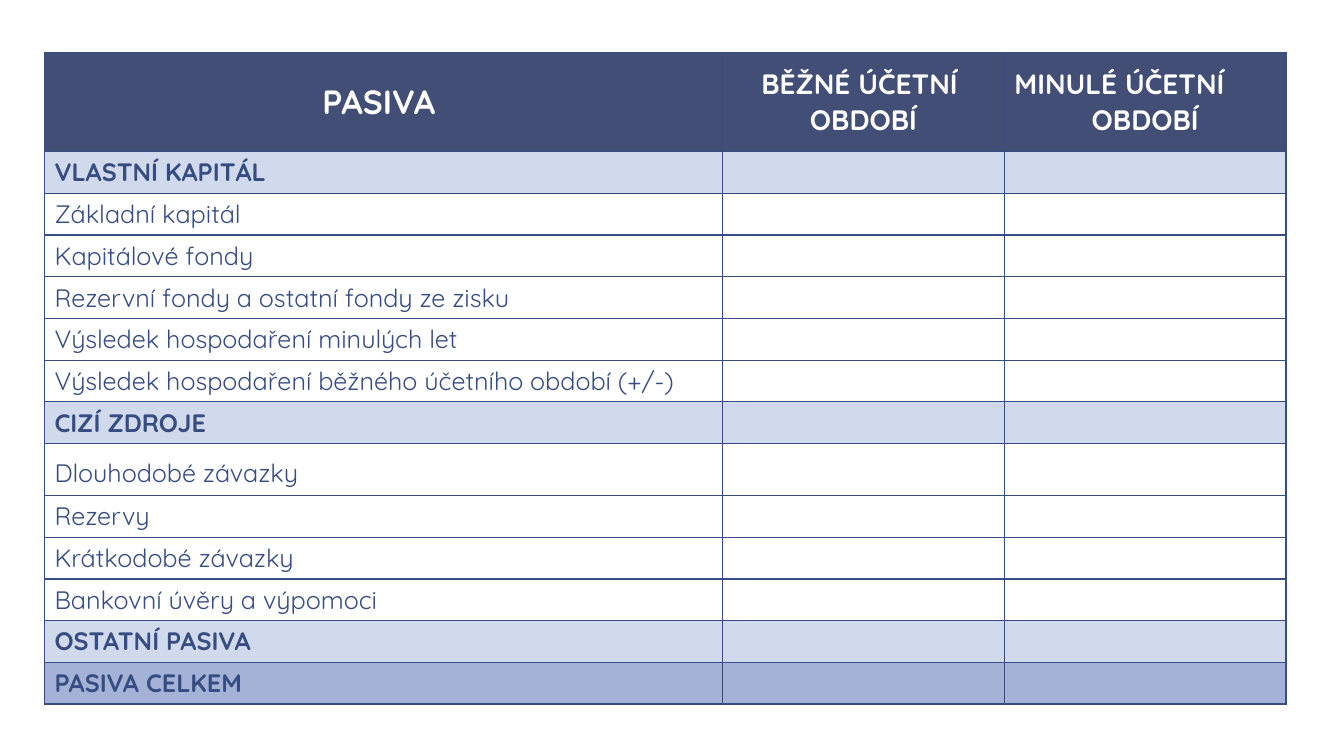
"""Build the liabilities side of a balance sheet as one table slide."""
from dataclasses import dataclass

from lxml.etree import SubElement
from pptx import Presentation
from pptx.dml.color import RGBColor as RGB
from pptx.enum.text import MSO_ANCHOR as Anchor, PP_ALIGN as Align
from pptx.oxml.ns import qn
from pptx.util import Cm, Pt

HEADS = [
    [("PASIVA ", Align.CENTER)],
    [("BĚŽNÉ ÚČETNÍ ", Align.CENTER), ("OBDOBÍ", Align.CENTER)],
    [("MINULÉ ÚČETNÍ", Align.LEFT), ("OBDOBÍ", Align.CENTER)],
]
ROWS = [
    ("group", "VLASTNÍ KAPITÁL"),
    ("item", "Základní kapitál"),
    ("item", "Kapitálové fondy"),
    ("item", "Rezervní fondy a ostatní fondy ze zisku"),
    ("item", "Výsledek hospodaření minulých let"),
    ("item", "Výsledek hospodaření běžného účetního období (+/-)"),
    ("group", "CIZÍ ZDROJE"),
    ("tall", "Dlouhodobé závazky"),
    ("item", "Rezervy"),
    ("item", "Krátkodobé závazky"),
    ("item", "Bankovní úvěry a výpomoci"),
    ("group", "OSTATNÍ PASIVA"),
    ("total", "PASIVA CELKEM"),
]
WIDTHS = (17.09, 7.1, 7.1)
LEFT, TOP = 1.12, 1.32
HEAD, ROW, TALL = 2.5, 1.05, 1.31


@dataclass(frozen=True)
class Theme:
    """Colours and type sizes."""
    font: str = "Quicksand"
    ink: str = "374C81"
    head: str = "424E76"
    white: str = "FFFFFF"
    group: str = "D1D9EC"
    total: str = "A4B2D8"
    title: int = 24
    label: int = 20
    body: int = 18
    line: int = 1


LOOK = Theme()
FILLS = {"group": LOOK.group, "total": LOOK.total}


def frame(cell, fill):
    """Give a cell its borders, fill and anchor."""
    props = cell._tc.get_or_add_tcPr()
    for side in ("lnL", "lnR", "lnT", "lnB"):
        edge = SubElement(props, qn(f"a:{side}"), w=str(Pt(LOOK.line)))
        paint = SubElement(edge, qn("a:solidFill"))
        SubElement(paint, qn("a:srgbClr"), val=LOOK.ink)
    cell.fill.solid()
    cell.fill.fore_color.rgb = RGB.from_string(fill)
    cell.vertical_anchor = Anchor.MIDDLE


def write(cell, lines, size, color, bold):
    """Write aligned lines into a cell."""
    cell.text = "\n".join(text for text, _ in lines)
    for para, (_, align) in zip(cell.text_frame.paragraphs, lines):
        para.alignment = align
        font = para.font
        font.name, font.size, font.bold = LOOK.font, Pt(size), bold
        font.color.rgb = RGB.from_string(color)


def main():
    """Build and save the slide."""
    deck = Presentation()
    deck.slide_width, deck.slide_height = Cm(33.87), Cm(19.05)
    slide = deck.slides.add_slide(deck.slide_layouts[6])
    highs = [HEAD] + [TALL if kind == "tall" else ROW for kind, _ in ROWS]
    table = slide.shapes.add_table(
        len(highs), len(WIDTHS), Cm(LEFT), Cm(TOP),
        Cm(sum(WIDTHS)), Cm(sum(highs))).table
    for col, width in zip(table.columns, WIDTHS):
        col.width = Cm(width)
    for row, high in zip(table.rows, highs):
        row.height = Cm(high)

    for n, lines in enumerate(HEADS):
        cell = table.cell(0, n)
        frame(cell, LOOK.head)
        write(cell, lines, LOOK.label if n else LOOK.title, LOOK.white, True)

    for n, (kind, text) in enumerate(ROWS, 1):
        for cell in table.rows[n].cells:
            frame(cell, FILLS.get(kind, LOOK.white))
        cell = table.cell(n, 0)
        write(cell, [(text, Align.LEFT)], LOOK.body, LOOK.ink, kind in FILLS)
        if kind == "tall":
            cell.margin_top = Cm(0.29)
    deck.save("out.pptx")


if __name__ == "__main__":
    main()
